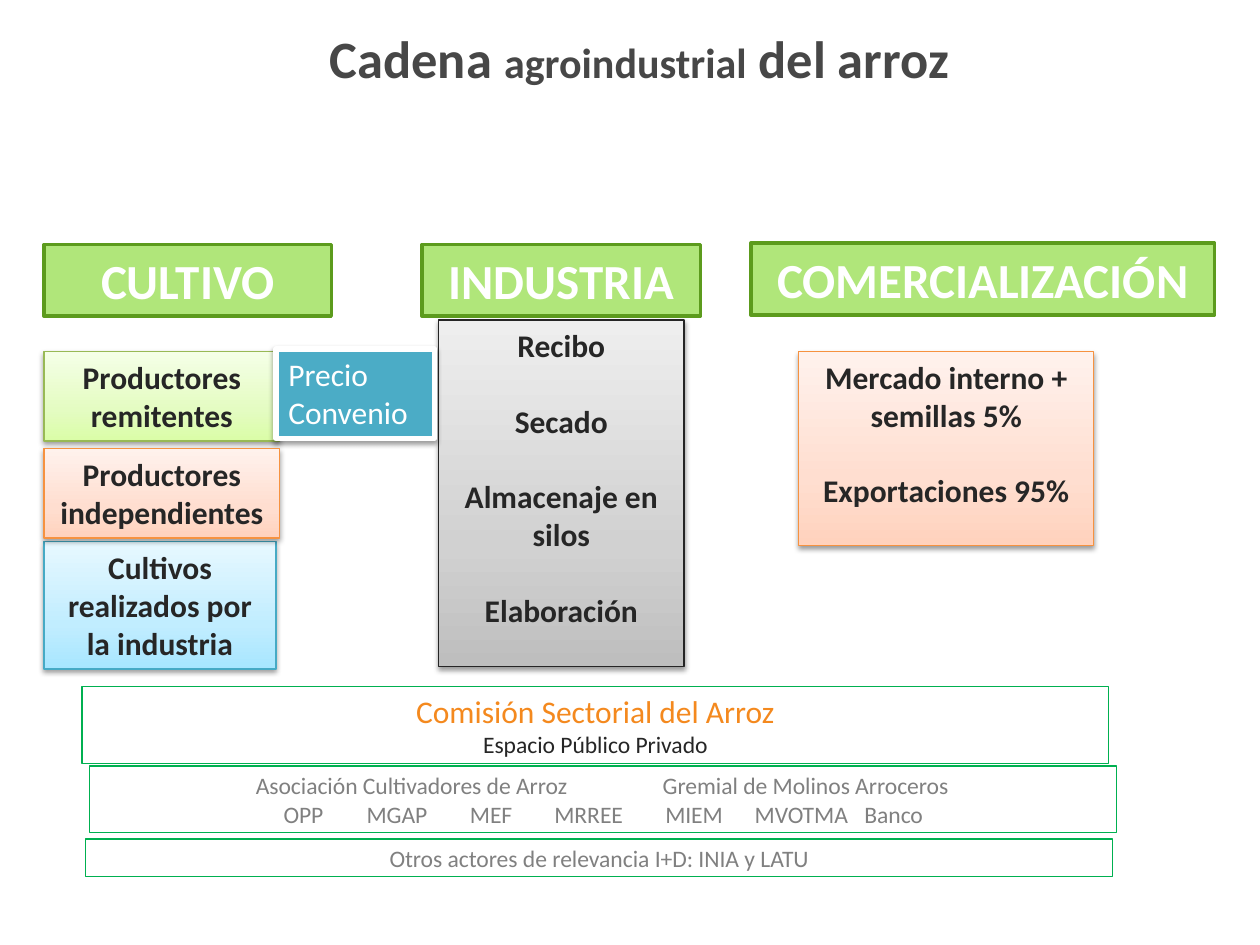
from lxml.etree import SubElement as add_element
from pptx import Presentation
from pptx.dml.color import RGBColor
from pptx.enum.shapes import MSO_SHAPE as Shape
from pptx.enum.text import MSO_ANCHOR as Anchor, MSO_AUTO_SIZE as AutoSize, PP_ALIGN as Align
from pptx.oxml.ns import qn
from pptx.util import Inches, Pt

WIDTH, HEIGHT = Inches(10), Inches(7.5)
FONT = "Calibri"
DARK, GREY, WHITE = "262626", "808080", "FFFFFF"
LEFT = 3.5  # left edge of the growing stage, in % of the width

# Gradient stops from bottom to top, then the outline
GREEN = (("DAFDA7", "E4FCC2", "F5FFE7"), "98B955")
BLUE = (("A7E6FF", "C1EDFF", "E7F8FF"), "46AAC5")
SILVER = (("BEBEBE", "D1D1D1", "EEEEEE"), "252525")
ORANGE = (("FFD2BD", "FFDED0", "FFF2ED"), "F69240")


def color(value):
    return RGBColor.from_string(value)


def place(left, top, width, height):
    """Turn shares of the slide, in percent, into lengths."""
    return (round(WIDTH * left / 100), round(HEIGHT * top / 100),
            round(WIDTH * width / 100), round(HEIGHT * height / 100))


def add_text(para, text, size=18, ink=DARK, bold=False):
    span = para.add_run()
    span.text = text
    span.font.name, span.font.size, span.font.bold = FONT, Pt(size), bold
    span.font.color.rgb = color(ink)


def next_para(box, align=Align.CENTER, gap=0):
    frame = box.text_frame
    first = frame.paragraphs[0]
    para = frame.add_paragraph() if first.runs else first
    para.alignment = align
    if gap:
        para.space_before = Pt(gap)
    return para


def set_tabs(para, stops):
    tabs = add_element(para._p.get_or_add_pPr(), qn("a:tabLst"))
    for stop in stops:
        add_element(tabs, qn("a:tab"), pos=str(Inches(stop)), algn="l")


def add_box(page, area, line, weight=0.75, fill=None):
    box = page.shapes.add_shape(Shape.RECTANGLE, *place(*area))
    box.shadow.inherit = False
    box.line.color.rgb, box.line.width = color(line), Pt(weight)
    if fill:
        box.fill.solid()
        box.fill.fore_color.rgb = color(fill)
    else:
        box.fill.background()
    frame = box.text_frame
    frame.word_wrap, frame.vertical_anchor = True, Anchor.TOP
    frame.auto_size = AutoSize.SHAPE_TO_FIT_TEXT
    return box


def add_shadow(box):
    effects = box._element.spPr.find(qn("a:effectLst"))
    shadow = add_element(effects, qn("a:outerShdw"), blurRad=str(Pt(3.1)),
                         dist=str(Pt(1.6)), dir="5400000", rotWithShape="0")
    black = add_element(shadow, qn("a:srgbClr"), val="000000")
    add_element(black, qn("a:alpha"), val="38000")


def set_gradient(box, shades):
    box.fill.gradient()
    gradient = box._element.spPr.find(qn("a:gradFill"))
    for part in list(gradient):
        gradient.remove(part)
    stops = add_element(gradient, qn("a:gsLst"))
    for share, shade in zip((0, 35, 100), shades):
        stop = add_element(stops, qn("a:gs"), pos=str(share * 1000))
        add_element(stop, qn("a:srgbClr"), val=shade)
    add_element(gradient, qn("a:lin"), ang="16200000", scaled="0")


def add_title(page):
    box = page.shapes.add_textbox(*place(4.8, 1.07, 91.9, 10))
    box.text_frame.word_wrap = True
    box.text_frame.vertical_anchor = Anchor.MIDDLE
    para = next_para(box)
    for text, size in (("Cadena ", 30), ("agroindustrial", 24), (" del arroz", 30)):
        add_text(para, text, size=size, ink="474747", bold=True)


def add_heading(page, text, *area):
    box = add_box(page, area, "5C9B1D", weight=2, fill="B0E67A")
    add_text(next_para(box), text, size=28, ink=WHITE, bold=True)


def add_card(page, theme, lines, *area):
    shades, line = theme
    box = add_box(page, area, line)
    set_gradient(box, shades)
    add_shadow(box)
    for index, text in enumerate(lines):
        # Entries stand one empty line apart
        add_text(next_para(box, gap=21.6 if index else 0), text, bold=True)


def add_price(page):
    box = add_box(page, (21.9, 36.93, 12.6, 9.47), WHITE, weight=3, fill="4BACC6")
    add_shadow(box)
    add_text(next_para(box, Align.LEFT), "Precio Convenio", ink=WHITE)


def add_band(page, left, top, height):
    box = add_box(page, (left, top, 81.5, height), "00B050")
    frame = box.text_frame
    frame.margin_left = frame.margin_right = Inches(0.07)
    frame.margin_top = frame.margin_bottom = Inches(0.04)
    return box


def add_columns(box, entries):
    """Write one line whose entries start at the given tab stops."""
    para = next_para(box, Align.LEFT)
    set_tabs(para, entries.values())
    add_text(para, "".join("\t" + name for name in entries), size=13.5, ink=GREY)


def main():
    deck = Presentation()
    deck.slide_width, deck.slide_height = WIDTH, HEIGHT
    page = deck.slides.add_slide(deck.slide_layouts[6])

    add_title(page)

    # Stages of the chain
    add_heading(page, "CULTIVO", LEFT, 25.87, 22.8, 7.6)
    add_heading(page, "INDUSTRIA", 33.5, 25.87, 22.1, 7.6)
    add_heading(page, "COMERCIALIZACIÓN", 59.6, 25.73, 36.8, 7.6)

    # What each stage holds
    add_card(page, GREEN, ["Productores remitentes"], LEFT, 37.2, 18.7, 9.47)
    add_card(page, BLUE, ["Cultivos realizados por la industria"],
             LEFT, 57.33, 18.4, 13.47)
    add_card(page, SILVER, ["Recibo", "Secado", "Almacenaje en silos", "Elaboración"],
             34.8, 33.87, 19.5, 36.67)
    add_card(page, ORANGE, ["Mercado interno + semillas 5%", "Exportaciones 95%"],
             63.4, 37.2, 23.4, 20.53)

    # Institutions
    commission = add_band(page, 6.5, 72.67, 8.13)
    add_text(next_para(commission), "Comisión Sectorial del Arroz", ink="F4891E")
    add_text(next_para(commission), "Espacio Público Privado", size=13.5)

    members = add_band(page, 7.1, 81.07, 7.07)
    add_columns(members, {"Asociación Cultivadores de Arroz": 1.25,
                          "Gremial de Molinos Arroceros": 4.48})
    add_columns(members, {"OPP": 1.47, "MGAP": 2.13, "MEF": 2.95, "MRREE": 3.62,
                          "MIEM": 4.5, "MVOTMA": 5.21, "Banco": 6.08})

    others = add_band(page, 6.8, 88.8, 4)
    add_text(next_para(others), "Otros actores de relevancia I+D: INIA y LATU",
             size=13.5, ink=GREY)

    # Price agreement between growers and mills, and the card below it
    add_price(page)
    add_card(page, ORANGE, ["Productores independientes"], LEFT, 47.47, 18.7, 9.47)

    deck.save("out.pptx")


if __name__ == "__main__":
    main()
